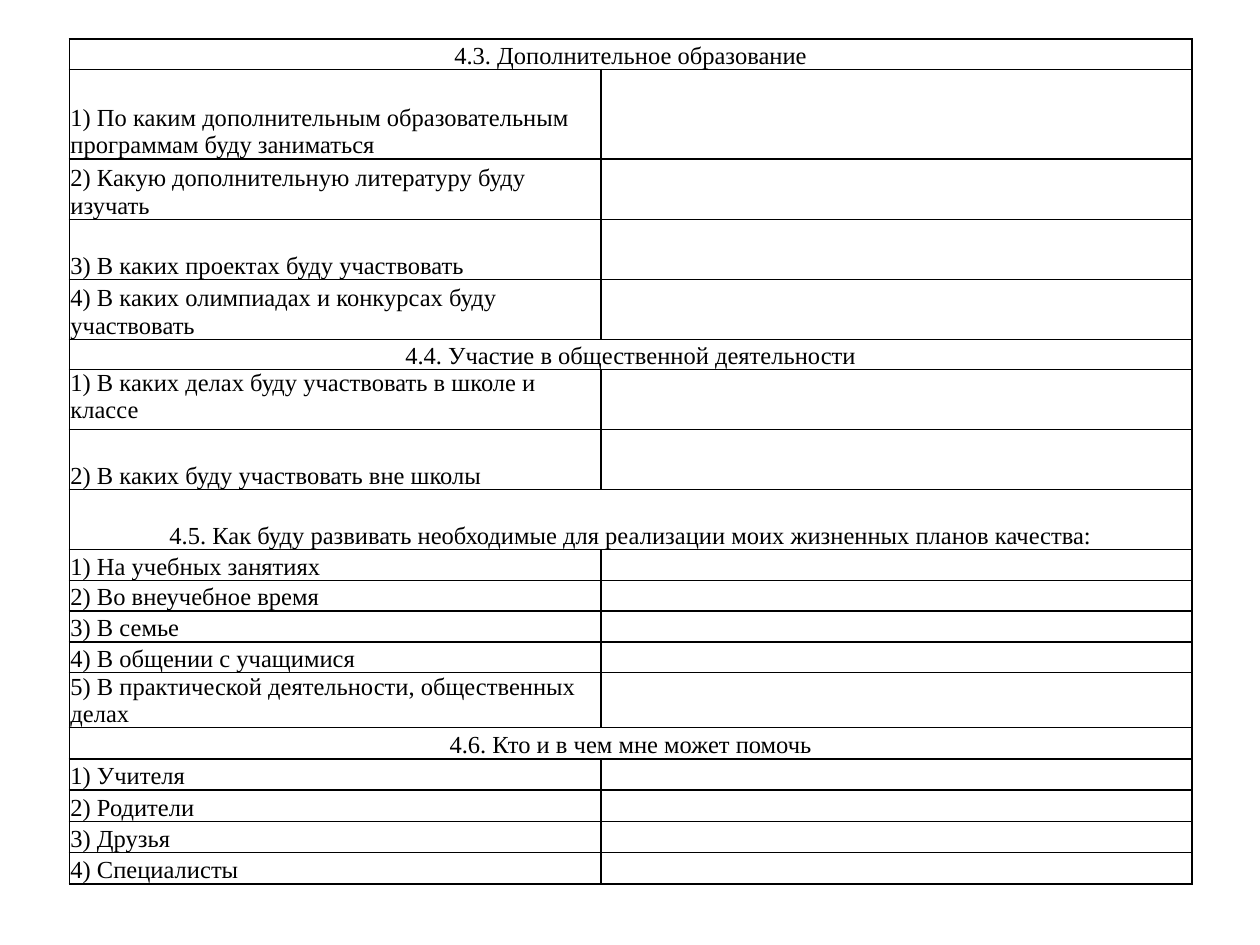
from lxml.etree import SubElement
from pptx import Presentation
from pptx.dml.color import RGBColor
from pptx.enum.text import MSO_ANCHOR, PP_ALIGN
from pptx.oxml import parse_xml
from pptx.oxml.ns import nsdecls, qn
from pptx.util import Cm, Pt

# Content: (heading, height, [(question, height), ...]), heights in cm
PLAN = [
    ("4.3. Дополнительное образование", 0.61, [
        ("1) По каким дополнительным образовательным программам буду заниматься", 1.81),
        ("2) Какую дополнительную литературу буду изучать", 1.21),
        ("3) В каких проектах буду участвовать", 1.21),
        ("4) В каких олимпиадах и конкурсах буду участвовать", 1.21),
    ]),
    ("4.4. Участие в общественной деятельности", 0.61, [
        ("1) В каких делах буду участвовать в школе и классе", 1.21),
        ("2) В каких буду участвовать вне школы", 1.21),
    ]),
    ("4.5. Как буду развивать необходимые для реализации моих жизненных планов качества:", 1.21, [
        ("1) На учебных занятиях", 0.62),
        ("2) Во внеучебное время", 0.62),
        ("3) В семье", 0.62),
        ("4) В общении с учащимися", 0.62),
        ("5) В практической деятельности, общественных делах", 1.11),
    ]),
    ("4.6. Кто и в чем мне может помочь", 0.63, [
        ("1) Учителя", 0.63),
        ("2) Родители", 0.63),
        ("3) Друзья", 0.63),
        ("4) Специалисты", 0.63),
    ]),
]
TOP_ROWS = {"1) В каких делах буду участвовать в школе и классе"}
COLS = (10.72, 11.91)
LEFT, TOP = 1.4, 0.79
COLOR = {"ink": "000000", "paper": "FFFFFF"}
FONT, SIZE = "Times New Roman", 14


def frame(cell):
    """White fill, thin margins and a black line on all four sides."""
    cell.fill.solid()
    cell.fill.fore_color.rgb = RGBColor.from_string(COLOR["paper"])
    cell.margin_left = cell.margin_right = Cm(0.02)
    cell.margin_top = cell.margin_bottom = 0
    props = cell._tc.get_or_add_tcPr()
    for i, side in enumerate("LRTB"):
        props.insert(i, parse_xml(
            f'<a:ln{side} {nsdecls("a")} w="{Pt(1)}"><a:solidFill>'
            f'<a:srgbClr val="{COLOR["ink"]}"/></a:solidFill></a:ln{side}>'))
    # Keeps blank cells from stretching their row
    para = cell.text_frame.paragraphs[0]._p
    SubElement(para, qn("a:endParaRPr"), sz=str(SIZE * 100))


def write(cell, text, align):
    para = cell.text_frame.paragraphs[0]
    para.alignment = align
    run = para.add_run()
    run.text = text
    run.font.name = FONT
    run.font.size = Pt(SIZE)
    run.font.color.rgb = RGBColor.from_string(COLOR["ink"])
    cell.vertical_anchor = MSO_ANCHOR.TOP if text in TOP_ROWS else MSO_ANCHOR.BOTTOM


def main():
    deck = Presentation()
    deck.slide_width, deck.slide_height = Cm(25.4), Cm(19.05)
    slide = deck.slides.add_slide(deck.slide_layouts[6])

    # Flatten the sections into rows
    rows = []
    for head, high, items in PLAN:
        rows.append((head, high, True))
        rows += [(text, tall, False) for text, tall in items]

    # Table grid
    total = sum(high for _, high, _ in rows)
    grid = slide.shapes.add_table(len(rows), len(COLS), Cm(LEFT), Cm(TOP),
                                  Cm(sum(COLS)), Cm(total)).table
    grid.first_row = grid.horz_banding = False
    for col, wide in zip(grid.columns, COLS):
        col.width = Cm(wide)

    # Headings span both columns, questions leave the right cell blank
    for row, (text, high, head) in zip(grid.rows, rows):
        row.height = Cm(high)
        left, right = row.cells
        frame(left)
        frame(right)
        if head:
            left.merge(right)
        write(left, text, PP_ALIGN.CENTER if head else PP_ALIGN.LEFT)

    deck.save("out.pptx")


if __name__ == "__main__":
    main()
